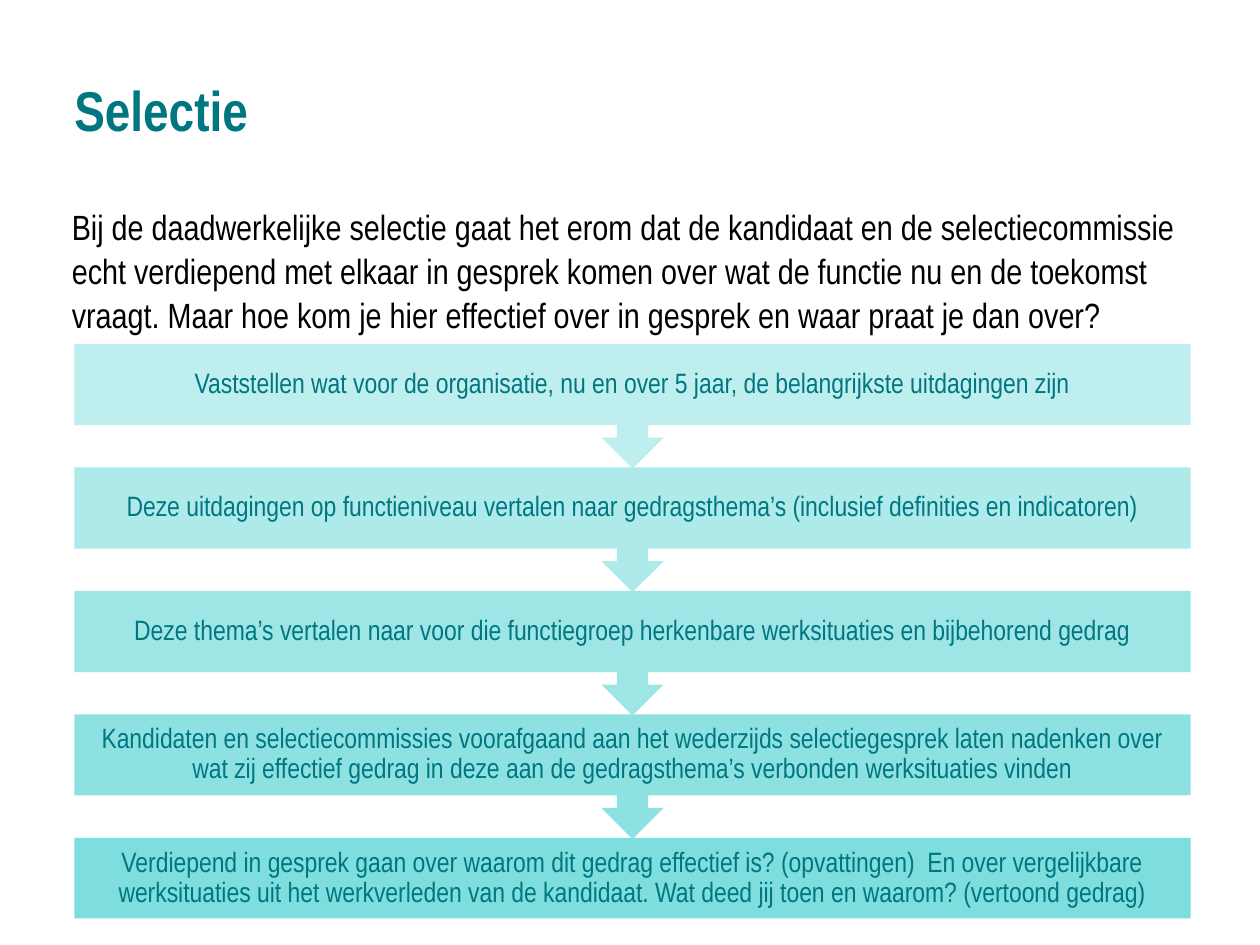
from pptx import Presentation
from pptx.dml.color import RGBColor
from pptx.enum.shapes import MSO_SHAPE
from pptx.enum.text import MSO_ANCHOR, PP_ALIGN
from pptx.util import Inches, Pt

COLORS = {"teal": "007681", "black": "000000"}

prs = Presentation()
prs.slide_width, prs.slide_height = Inches(10), Inches(7.5)
s = prs.slides.add_slide(prs.slide_layouts[6])


def add_text(text, left, top, width, height, size, color, spacing,
             inset=0, anchor=MSO_ANCHOR.MIDDLE, align=PP_ALIGN.LEFT, bold=False):
    sp = s.shapes.add_textbox(Inches(left), Inches(top), Inches(width), Inches(height))
    tf = sp.text_frame
    tf.word_wrap = True
    tf.vertical_anchor = anchor
    tf.margin_left = tf.margin_right = tf.margin_top = tf.margin_bottom = Inches(inset)
    p = tf.paragraphs[0]
    p.text = text
    p.alignment = align
    p.line_spacing = spacing
    p.font.name = "Arial Narrow"
    p.font.size = Pt(size)
    p.font.bold = bold
    p.font.color.rgb = RGBColor.from_string(COLORS[color])


# Title and introduction
add_text("Selectie", 0.59, 0.6, 6.93, 0.58, 32, "teal", Pt(35), bold=True)
add_text(
    "Bij de daadwerkelijke selectie gaat het erom dat de kandidaat en de "
    "selectiecommissie echt verdiepend met elkaar in gesprek komen over wat de "
    "functie nu en de toekomst vraagt. Maar hoe kom je hier effectief over in "
    "gesprek en waar praat je dan over?",
    0.57, 1.62, 8.86, 1.1, 20, "black", Pt(25), anchor=MSO_ANCHOR.TOP)

# Process steps, from top to bottom
steps = [
    ("BEEEEE", "Vaststellen wat voor de organisatie, nu en over 5 jaar, de "
               "belangrijkste uitdagingen zijn"),
    ("AEEAEA", "Deze uitdagingen op functieniveau vertalen naar gedragsthema’s "
               "(inclusief definities en indicatoren)"),
    ("9EE6E6", "Deze thema’s vertalen naar voor die functiegroep herkenbare "
               "werksituaties en bijbehorend gedrag"),
    ("8EE1E1", "Kandidaten en selectiecommissies voorafgaand aan het wederzijds "
               "selectiegesprek laten nadenken over wat zij effectief gedrag in deze "
               "aan de gedragsthema’s verbonden werksituaties vinden"),
    ("7EDDDD", "Verdiepend in gesprek gaan over waarom dit gedrag effectief is? "
               "(opvattingen)  En over vergelijkbare werksituaties uit het werkverleden "
               "van de kandidaat. Wat deed jij toen en waarom? (vertoond gedrag)"),
]
LEFT, TOP, WIDTH, PITCH = 0.59, 2.73, 8.86, 0.98
BOX_H, CALLOUT_H = 0.64, 0.99
last = len(steps) - 1

# Drawn from the last step up, so each arrow tip lies over the next box
for i, (fill, text) in reversed(list(enumerate(steps))):
    top = TOP + i * PITCH
    kind, height = ((MSO_SHAPE.RECTANGLE, BOX_H) if i == last
                    else (MSO_SHAPE.UP_ARROW_CALLOUT, CALLOUT_H))
    sp = s.shapes.add_shape(kind, Inches(LEFT), Inches(top), Inches(WIDTH), Inches(height))
    sp.rotation = 0 if i == last else 180
    sp.shadow.inherit = False
    sp.fill.solid()
    sp.fill.fore_color.rgb = RGBColor.from_string(fill)
    sp.line.fill.background()
    add_text(text, LEFT, top, WIDTH, BOX_H, 16, "teal", 0.9,
             inset=0.12, align=PP_ALIGN.CENTER)

prs.save("out.pptx")
